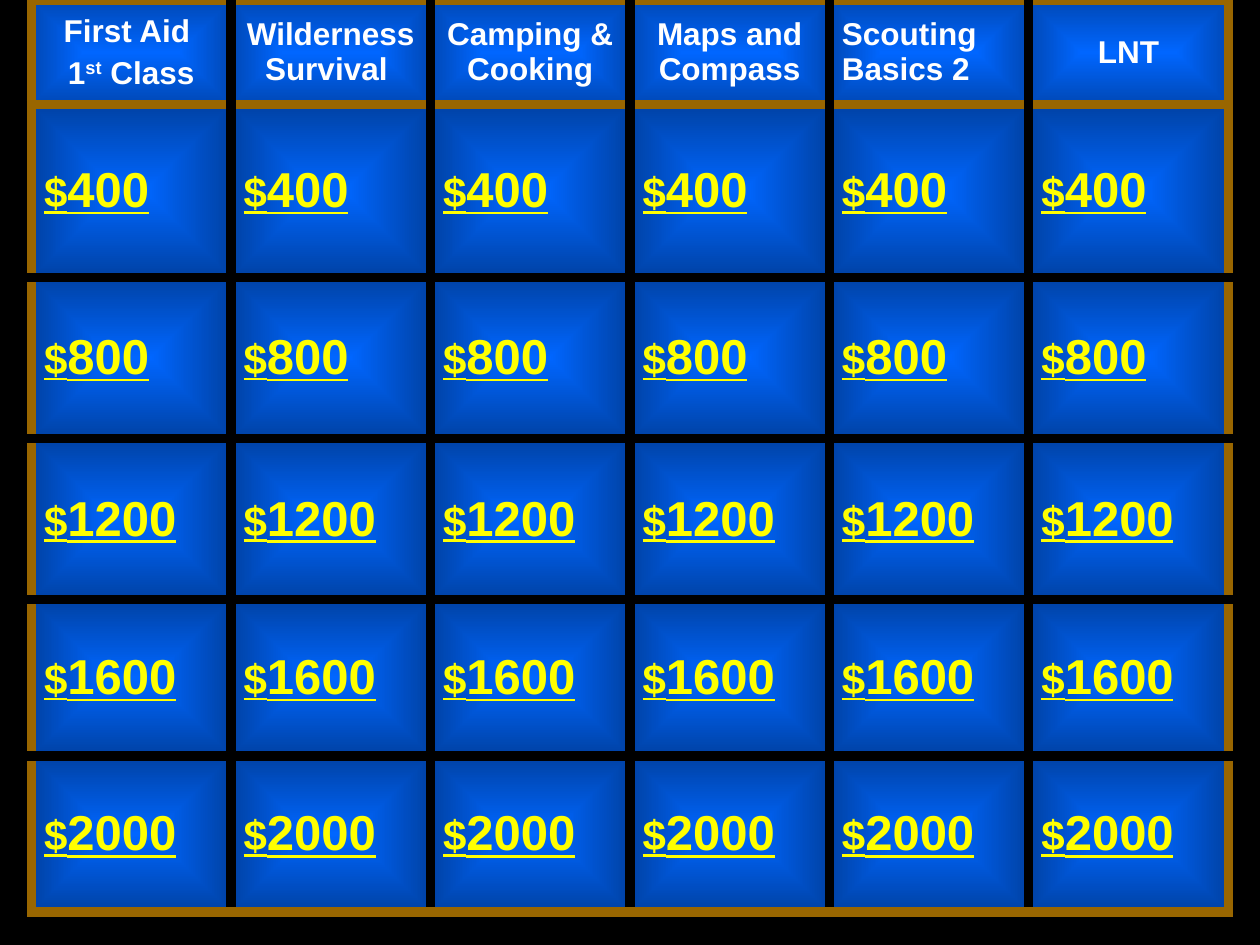
from pptx import Presentation
from pptx.dml.color import RGBColor
from pptx.enum.text import MSO_ANCHOR, PP_ALIGN
from pptx.oxml import parse_xml
from pptx.oxml.ns import nsdecls
from pptx.util import Inches, Pt

MIDDLE = MSO_ANCHOR.MIDDLE
LEFT, CENTER = PP_ALIGN.LEFT, PP_ALIGN.CENTER

TOPICS = [
    ([["First Aid "], ["1", "st", " Class"]], CENTER),
    ([["Wilderness Survival "]], CENTER),
    ([["Camping & Cooking"]], CENTER),
    ([["Maps and Compass"]], CENTER),
    ([["Scouting Basics 2"]], LEFT),
    ([["LNT"]], CENTER),
]
PRIZES = ["400", "800", "1200", "1600", "2000"]

THEME = {
    "font": "Arial", "back": "000000", "gold": "996600", "blue": "0066FF",
    "white": "FFFFFF", "yellow": "FFFF00",
    "topic": 18, "sign": 24, "prize": 28, "line": 6,
    "head shade": 46275, "body shade": 37255,
}
SIDE, WIDTH = 0.25, 9.5
HEAD = [0.83]
BODY = [1.37, 1.28, 1.28, 1.24, 1.24]


def border(side, color):
    return parse_xml(
        f'<a:ln{side} {nsdecls("a")} w="{Pt(THEME["line"])}">'
        f'<a:solidFill><a:srgbClr val="{color}"/></a:solidFill></a:ln{side}>')


def glow(shade):
    blue = THEME["blue"]
    return parse_xml(
        f'<a:gradFill {nsdecls("a")} rotWithShape="0"><a:gsLst>'
        f'<a:gs pos="0"><a:srgbClr val="{blue}"/></a:gs>'
        f'<a:gs pos="100000"><a:srgbClr val="{blue}"><a:shade val="{shade}"/>'
        '</a:srgbClr></a:gs></a:gsLst><a:path path="shape">'
        '<a:fillToRect l="50000" t="50000" r="50000" b="50000"/>'
        '</a:path></a:gradFill>')


def add_grid(slide, top, rows, shade):
    count = len(TOPICS)
    frame = slide.shapes.add_table(
        len(rows), count, Inches(SIDE), Inches(top), Inches(WIDTH), Inches(sum(rows)))
    grid = frame.table
    grid.first_row = grid.horz_banding = False
    for col in grid.columns:
        col.width = Inches(WIDTH / count)
    for r, high in enumerate(rows):
        grid.rows[r].height = Inches(high)
        for c in range(count):
            cell = grid.cell(r, c)
            cell.vertical_anchor = MIDDLE
            edges = {"L": c == 0, "R": c == count - 1,
                     "T": r == 0, "B": r == len(rows) - 1}
            props = cell._tc.get_or_add_tcPr()
            for side, outer in edges.items():
                props.append(border(side, THEME["gold" if outer else "back"]))
            props.append(glow(shade))
    return grid


def add_run(para, text, size, color):
    run = para.add_run()
    run.text = text
    font = run.font
    font.name, font.size, font.bold = THEME["font"], Pt(size), True
    font.color.rgb = RGBColor.from_string(color)
    return run


def fill_head(grid):
    for c, (lines, align) in enumerate(TOPICS):
        frame = grid.cell(0, c).text_frame
        for i, parts in enumerate(lines):
            para = frame.add_paragraph() if i else frame.paragraphs[0]
            para.alignment = align
            if i:
                para.space_before = Pt(0.2 * THEME["topic"])
            for part in parts:
                run = add_run(para, part, THEME["topic"], THEME["white"])
                if part == "st":
                    run.font._element.set("baseline", "30000")


def fill_body(grid):
    for r, prize in enumerate(PRIZES):
        for c in range(len(TOPICS)):
            para = grid.cell(r, c).text_frame.paragraphs[0]
            for text, kind in (("$", "sign"), (prize, "prize")):
                run = add_run(para, text, THEME[kind], THEME["yellow"])
                run.font.underline = True


def main():
    deck = Presentation()
    deck.slide_width, deck.slide_height = Inches(10), Inches(7.5)
    slide = deck.slides.add_slide(deck.slide_layouts[6])
    back = slide.background.fill
    back.solid()
    back.fore_color.rgb = RGBColor.from_string(THEME["back"])
    fill_head(add_grid(slide, 0, HEAD, THEME["head shade"]))
    fill_body(add_grid(slide, sum(HEAD), BODY, THEME["body shade"]))
    deck.save("out.pptx")


if __name__ == "__main__":
    main()
